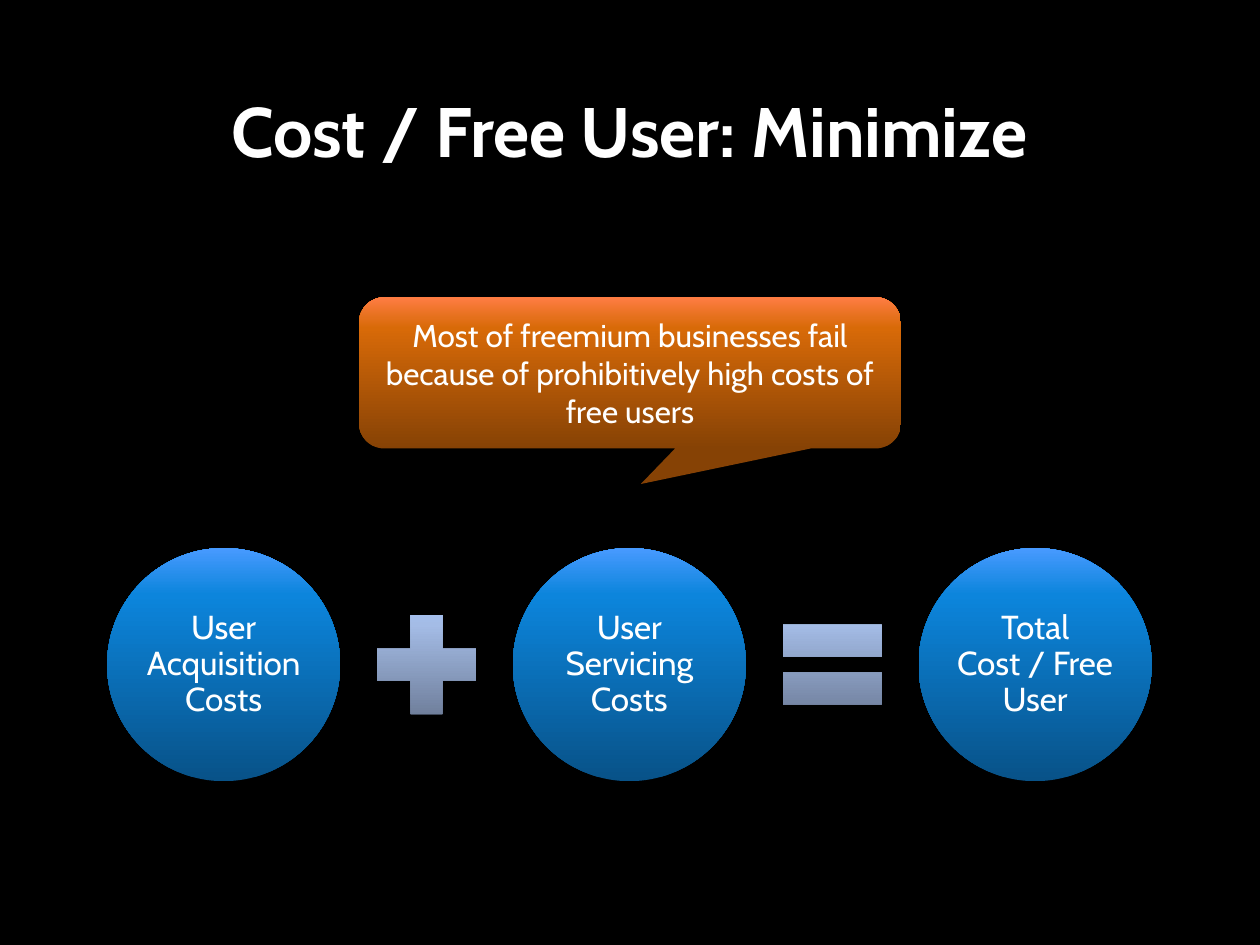
"""Build the slide on minimizing the cost per free user."""
from copy import deepcopy

from pptx import Presentation
from pptx.dml.color import RGBColor
from pptx.enum.shapes import MSO_SHAPE
from pptx.enum.text import MSO_ANCHOR, PP_ALIGN
from pptx.oxml.ns import qn
from pptx.util import Inches, Pt

CENTER = PP_ALIGN.CENTER
MIDDLE = MSO_ANCHOR.MIDDLE
CIRCLE = MSO_SHAPE.OVAL
PLUS = MSO_SHAPE.MATH_PLUS
EQUAL = MSO_SHAPE.MATH_EQUAL
CALLOUT = MSO_SHAPE.ROUNDED_RECTANGULAR_CALLOUT
BLUE = ("085288", "0C85DC", "489AFF")
GRAY = ("66748E", "A4BCE6", "A9C7FF")
ORANGE = ("864205", "D86A08", "FF7D44")


def write(shape, text, size, bold=False, spacing=1.0, inset=0.1):
    frame = shape.text_frame
    frame.word_wrap = True
    frame.vertical_anchor = MIDDLE
    frame.margin_left = frame.margin_right = Inches(inset)
    frame.margin_top = frame.margin_bottom = Inches(min(inset, 0.05))
    para = frame.paragraphs[0]
    para.alignment = CENTER
    para.line_spacing = spacing
    span = para.add_run()
    span.text = text
    span.font.name = "Cabin"
    span.font.size = Pt(size)
    span.font.bold = bold
    span.font.color.rgb = RGBColor.from_string("FFFFFF")


def add_gradient_shape(kind, left, top, width, height, colors):
    shape = page.shapes.add_shape(
        kind, Inches(left), Inches(top), Inches(width), Inches(height))
    shape.shadow.inherit = False
    shape.line.fill.background()
    shape.fill.gradient()
    shape.fill.gradient_angle = 90
    stop_list = next(shape._element.iter(qn("a:gsLst")))
    stop_list.append(deepcopy(stop_list[-1]))
    for stop, position, color in zip(shape.fill.gradient_stops, (0, 0.8, 1), colors):
        stop.position = position
        stop.color.rgb = RGBColor.from_string(color)
    return shape


deck = Presentation()
deck.slide_width = Inches(10)
deck.slide_height = Inches(7.5)
page = deck.slides.add_slide(deck.slide_layouts[5])
page.background.fill.solid()
page.background.fill.fore_color.rgb = RGBColor.from_string("000000")

title = page.shapes.title
title.left, title.top = Inches(0.85), Inches(0.12)
title.width, title.height = Inches(8.29), Inches(1.81)
write(title, "Cost / Free User: Minimize", 40, bold=True)

circle_size, sign_size, gap = 1.85, 1.07, 0.15
circle_top = 4.35
sign_top = circle_top + (circle_size - sign_size) / 2
step = circle_size + sign_size + 2 * gap
terms = ("User Acquisition Costs", "User Servicing Costs", "Total Cost / Free User")
for index, term in enumerate(terms):
    left = 0.85 + index * step
    circle = add_gradient_shape(
        CIRCLE, left, circle_top, circle_size, circle_size, BLUE)
    write(circle, term, 19, spacing=0.9, inset=0.03)
for index, sign in enumerate((PLUS, EQUAL)):
    left = 0.85 + index * step + circle_size + gap
    add_gradient_shape(sign, left, sign_top, sign_size, sign_size, GRAY)

callout = add_gradient_shape(CALLOUT, 2.85, 2.36, 4.3, 1.2, ORANGE)
for index, value in enumerate((0.02, 0.735, 0.167)):
    callout.adjustments[index] = value
write(callout, "Most of freemium businesses fail because of "
      "prohibitively high costs of free users", 18)

deck.save("out.pptx")
